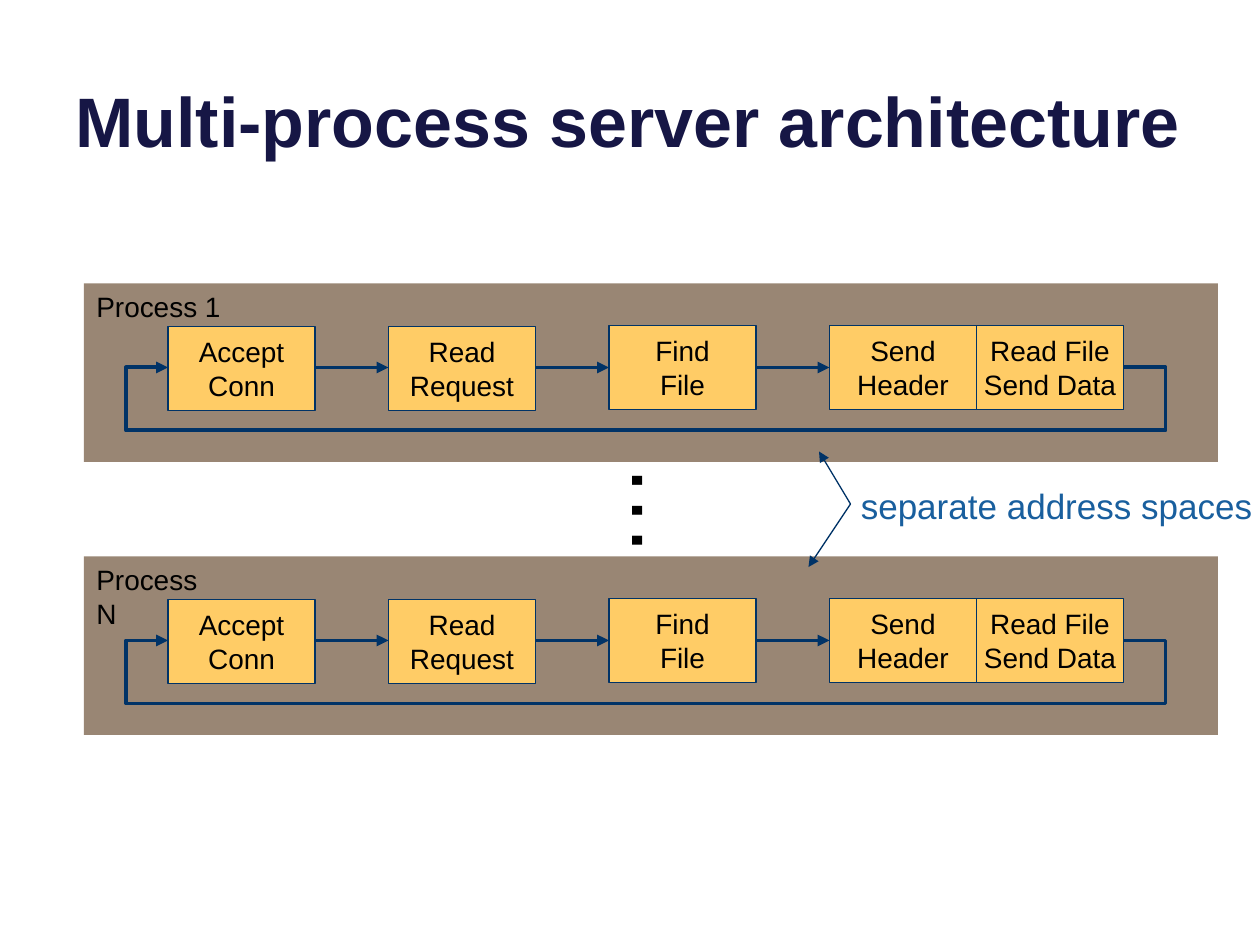
import pptx
import pptx.util
import pptx.dml.color
import pptx.enum.shapes
import pptx.enum.text
import pptx.oxml
import pptx.oxml.ns

PX = 7620
HEX = {"title": "161645", "panel": "998674", "box": "FFCC66",
       "line": "003367", "text": "000000", "note": "195F9E"}
STEPS = [(80, 41, "Accept\nConn"), (290, 41, "Read\nRequest"),
         (500, 40, "Find\nFile"), (710, 40, "Send\nHeader"),
         (850, 40, "Read File\nSend Data")]
BOX_W, BOX_H = 140, 80
MID = 80
ALIGN = pptx.enum.text.PP_ALIGN
ANCHOR = pptx.enum.text.MSO_ANCHOR
AUTO = pptx.enum.text.MSO_AUTO_SIZE


def px(*nums):
    return [pptx.util.Emu(num * PX) for num in nums]


def tint(name):
    return pptx.dml.color.RGBColor.from_string(HEX[name])


def write(frame, text, size, color, align=ALIGN.LEFT, bold=False):
    frame.text = text
    for para in frame.paragraphs:
        para.alignment = align
        for run in para.runs:
            run.font.name = "Arial"
            run.font.size = pptx.util.Pt(size)
            run.font.bold = bold
            run.font.color.rgb = tint(color)


def add_tag(tree, tag, **attrs):
    node = pptx.oxml.parse_xml(f"<{tag} {pptx.oxml.ns.nsdecls('a')}/>")
    for key, val in attrs.items():
        node.set(key, val)
    tree.append(node)


def stroke(shape, width, head=False):
    shape.line.color.rgb = tint("line")
    shape.line.width = pptx.util.Pt(width)
    if head:
        edge = shape.element.spPr.find(pptx.oxml.ns.qn("a:ln"))
        add_tag(edge, "a:tailEnd", type="triangle")


def add_rect(shapes, box, fill):
    rect = shapes.add_shape(pptx.enum.shapes.MSO_SHAPE.RECTANGLE, *px(*box))
    rect.shadow.inherit = False
    rect.fill.solid()
    rect.fill.fore_color.rgb = tint(fill)
    rect.line.fill.background()
    return rect


def add_arrow(shapes, ends, width):
    kind = pptx.enum.shapes.MSO_CONNECTOR.STRAIGHT
    arrow = shapes.add_connector(kind, *px(*ends))
    stroke(arrow, width, True)
    add_tag(arrow.element.spPr, "a:effectLst")


def add_label(shapes, box, text, size, color):
    label = shapes.add_textbox(*px(*box))
    write(label.text_frame, text, size, color)
    label.text_frame.word_wrap = False
    label.text_frame.auto_size = AUTO.SHAPE_TO_FIT_TEXT
    return label


def add_loop(shapes, left, top):
    pts = [(990, 80), (1030, 80), (1030, 140), (40, 140), (40, 80), (80, 80)]
    pts = [(left + x, top + y) for x, y in pts]
    form = shapes.build_freeform(*pts[0], scale=PX)
    form.add_line_segments(pts[1:], close=False)
    loop = form.convert_to_shape()
    loop.shadow.inherit = False
    loop.fill.background()
    stroke(loop, 2.25, True)


def add_process(slide, box, name):
    left, top = box[:2]
    shapes = slide.shapes.add_group_shape().shapes
    add_rect(shapes, box, "panel")
    for x, y, text in STEPS:
        step = add_rect(shapes, (left + x, top + y, BOX_W, BOX_H), "box")
        stroke(step, 0.75)
        write(step.text_frame, text, 16, "text", ALIGN.CENTER)
        step.text_frame.word_wrap = False
        step.text_frame.vertical_anchor = ANCHOR.MIDDLE
    for (start, _, _), (end, _, _) in zip(STEPS[:3], STEPS[1:4]):
        ends = (left + start + BOX_W, top + MID, left + end, top + MID)
        add_arrow(shapes, ends, 2.25)
    add_loop(shapes, left, top)
    add_label(slide.shapes, (left, top, 145, 44), name, 16, "text")


def add_title(slide, box, text):
    title = slide.shapes.title
    title.left, title.top, title.width, title.height = px(*box)
    frame = title.text_frame
    write(frame, text, 40, "title", bold=True)
    frame.word_wrap = True
    frame.auto_size = AUTO.NONE
    frame.vertical_anchor = ANCHOR.BOTTOM


def add_middle(slide, box):
    left, top = box
    dots = add_label(slide.shapes, (left, top, 114, 120), "…", 54, "text")
    dots.rotation = 90
    add_label(slide.shapes, (left + 227, top + 29, 401, 53),
              "separate address spaces", 20, "note")
    x, y = left + 229, top + 53
    for end in [(x - 30, y - 50), (x - 40, y + 60)]:
        add_arrow(slide.shapes, (x, y, *end), 0.75)


def main():
    deck = pptx.Presentation()
    deck.slide_width, deck.slide_height = px(1200, 900)
    slide = deck.slides.add_slide(deck.slide_layouts[5])
    add_title(slide, (60, -44, 1080, 204), "Multi-process server architecture")
    for top, name in [(270, "Process 1"), (530, "Process N")]:
        add_process(slide, (80, top, 1080, 170), name)
    add_middle(slide, (581, 427))
    deck.save("out.pptx")


if __name__ == "__main__":
    main()
